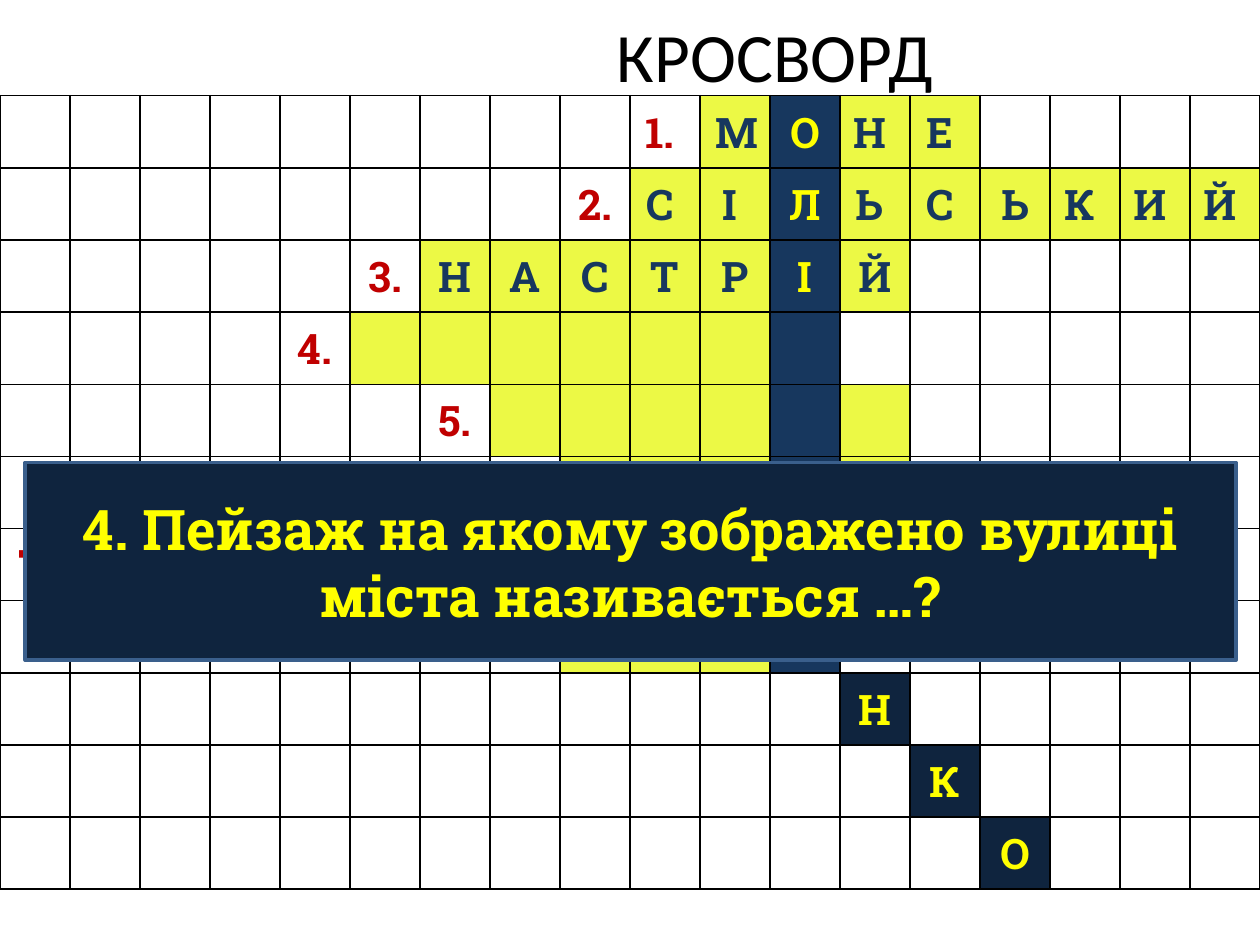
from lxml import etree
from pptx import Presentation
from pptx.dml.color import RGBColor
from pptx.enum.shapes import MSO_SHAPE
from pptx.enum.text import MSO_ANCHOR, PP_ALIGN
from pptx.oxml.ns import qn
from pptx.util import Inches, Pt

TITLE = "КРОСВОРД"
QUESTION = "4. Пейзаж на якому зображено вулиці міста називається …?"
COLS, ROWS, KEY_COL = 18, 11, 11
# Column of the clue number, length of the word, letters already solved
WORDS = [
    (9, 4, ["М ", "О", "Н ", "Е "]),
    (8, 9, ["С ", "І ", "Л", "Ь ", "С ", "Ь", "К ", "И ", "Й "]),
    (5, 7, list("НАСТРІЙ")),
    (4, 7, []),
    (6, 6, []),
    (7, 5, []),
    (0, 12, []),
    (7, 4, []),
]
DIAGONAL = "НКО"  # runs down and right after the key column

BLACK = RGBColor(0, 0, 0)
WHITE = RGBColor(0xFF, 0xFF, 0xFF)
RED = RGBColor(0xC0, 0, 0)
YELLOW = RGBColor(0xFF, 0xFF, 0)
LIME = RGBColor(0xEC, 0xF9, 0x45)
BLUE = RGBColor(0x17, 0x37, 0x5E)
NAVY = RGBColor(0x0F, 0x24, 0x3E)
STEEL = RGBColor(0x3A, 0x5F, 0x8C)
SLAB = "Roboto Slab"


def write(tf, text, size, color, font=SLAB, bold=True):
    tf.text = text
    tf.vertical_anchor = MSO_ANCHOR.MIDDLE
    p = tf.paragraphs[0]
    p.alignment = PP_ALIGN.CENTER
    f = p.runs[0].font
    f.size, f.name, f.bold, f.color.rgb = Pt(size), font, bold, color


def add_borders(cell):
    tc_pr = cell._tc.get_or_add_tcPr()
    for i, side in enumerate(("lnL", "lnR", "lnT", "lnB")):
        ln = etree.Element(qn(f"a:{side}"), w=str(Pt(1)))
        fill = etree.SubElement(ln, qn("a:solidFill"))
        etree.SubElement(fill, qn("a:srgbClr"), val=str(BLACK))
        tc_pr.insert(i, ln)


def fill_cell(cell, fill, text="", color=BLACK):
    cell.fill.solid()
    cell.fill.fore_color.rgb = fill
    if text:
        write(cell.text_frame, text, 24, color)
        cell.vertical_anchor = MSO_ANCHOR.MIDDLE


prs = Presentation()
prs.slide_width, prs.slide_height = Inches(10), Inches(7.5)
slide = prs.slides.add_slide(prs.slide_layouts[5])

title = slide.shapes.title
title.left, title.top = Inches(4.37), Inches(0.13)
title.width, title.height = Inches(3.56), Inches(0.61)
write(title.text_frame, TITLE, 39.6, BLACK, "Calibri", False)

table = slide.shapes.add_table(ROWS, COLS, 0, Inches(0.76), prs.slide_width, Inches(6.3)).table
table.first_row = table.horz_banding = False
for cell in table.iter_cells():
    fill_cell(cell, WHITE)
    add_borders(cell)

for row, (start, length, letters) in enumerate(WORDS):
    number = f"{row + 1}." + (" " if row == 0 else "")
    fill_cell(table.cell(row, start), WHITE, number, RED)
    for i in range(length):
        col = start + 1 + i
        fill, color = (BLUE, YELLOW) if col == KEY_COL else (LIME, BLUE)
        fill_cell(table.cell(row, col), fill, letters[i] if letters else "", color)

for i, letter in enumerate(DIAGONAL):
    fill_cell(table.cell(len(WORDS) + i, KEY_COL + 1 + i), NAVY, letter, YELLOW)

banner = slide.shapes.add_shape(MSO_SHAPE.RECTANGLE, Inches(0.2), Inches(3.67), Inches(9.61), Inches(1.57))
banner.shadow.inherit = False
banner.fill.solid()
banner.fill.fore_color.rgb = NAVY
banner.line.color.rgb = STEEL
banner.line.width = Pt(2)
banner.text_frame.word_wrap = True
write(banner.text_frame, QUESTION, 32, YELLOW)

prs.save("out.pptx")
